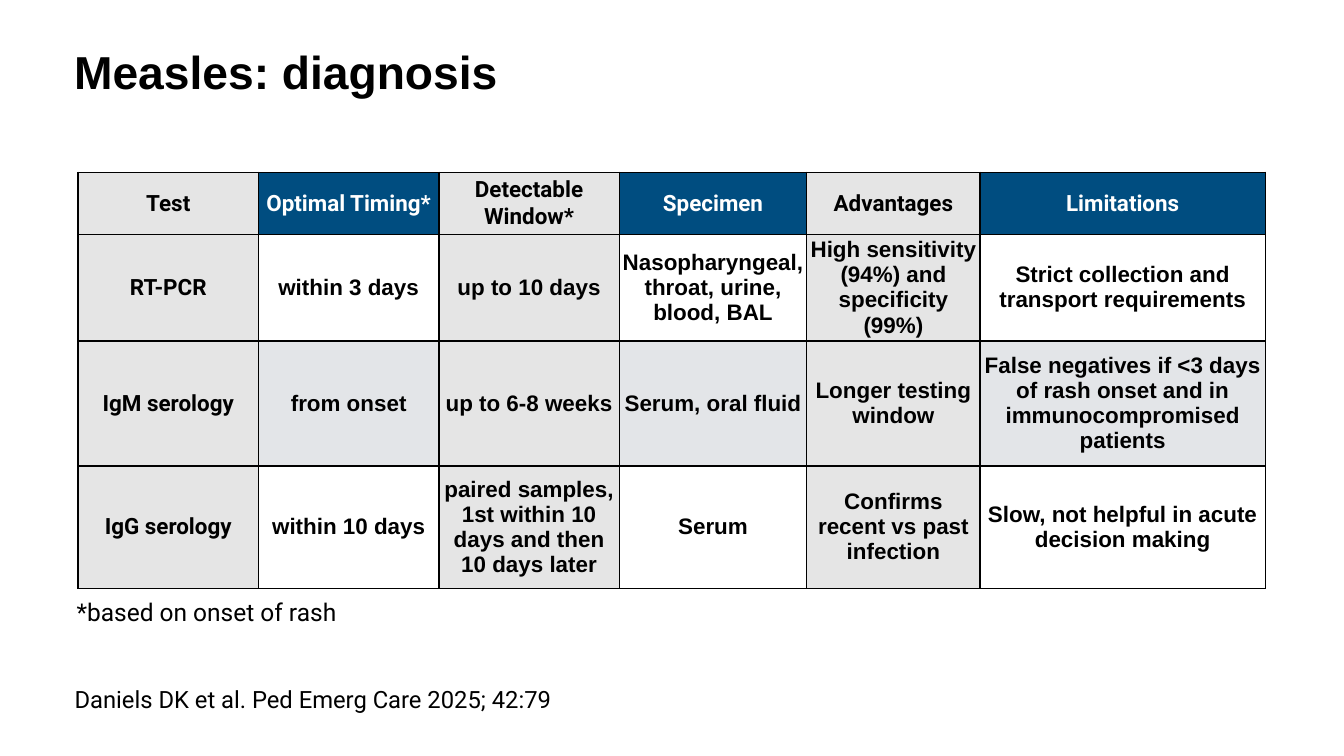
"""Build the measles diagnosis slide with its test comparison table."""
import dataclasses

import pptx
import pptx.dml.color
import pptx.enum.text
import pptx.oxml
import pptx.oxml.ns
import pptx.util

PX = 9144
ANCHOR = pptx.enum.text.MSO_ANCHOR
ALIGN = pptx.enum.text.PP_ALIGN
AUTO = pptx.enum.text.MSO_AUTO_SIZE


@dataclasses.dataclass(frozen=True)
class Theme:
    """Colours, fonts and type sizes of the slide."""
    ink: str = "000000"
    paper: str = "FFFFFF"
    accent: str = "004D80"
    band: str = "E3E5E8"
    shade_percent: int = 10
    heading: str = "Arial"
    label: str = "Roboto"
    title_size: int = 66
    cell_size: int = 32
    source_size: int = 34
    note_size: int = 35
    border_width: float = 2.25
    pad: int = 6
    title_pad: int = 10


def px(n):
    """Turn px into EMU."""
    return pptx.util.Emu(n * PX)


class Deck:
    """Holds the theme and the current slide, and draws each kind of element."""

    def __init__(self, prs, theme):
        """Add a title-only slide to the presentation."""
        self.theme = theme
        self.slide = prs.slides.add_slide(prs.slide_layouts[5])

    def run(self, p, text, size, font, color, bold=False):
        """Add one formatted run to a paragraph."""
        r = p.add_run()
        r.text = text
        r.font.size = pptx.util.Pt(size)
        r.font.name = font
        r.font.bold = bold
        r.font.color.rgb = pptx.dml.color.RGBColor.from_string(color)

    def inset(self, frame, pad):
        """Give a text frame or cell equal margins on all sides."""
        frame.margin_left = frame.margin_right = px(pad)
        frame.margin_top = frame.margin_bottom = px(pad)

    def title(self, text, x, y, w, h):
        """Place and fill the title placeholder."""
        t = self.theme
        sp = self.slide.shapes.title
        sp.left, sp.top, sp.width, sp.height = map(px, (x, y, w, h))
        tf = sp.text_frame
        tf.auto_size = AUTO.NONE
        tf.vertical_anchor = ANCHOR.MIDDLE
        self.inset(tf, t.title_pad)
        p = tf.paragraphs[0]
        p.alignment = ALIGN.LEFT
        p.line_spacing = 0.9
        self.run(p, text, t.title_size, t.heading, t.ink, True)

    def text(self, text, x, y, w, h, size):
        """Add a plain text box."""
        t = self.theme
        tf = self.slide.shapes.add_textbox(*map(px, (x, y, w, h))).text_frame
        tf.word_wrap = True
        tf.auto_size = AUTO.SHAPE_TO_FIT_TEXT
        tf.vertical_anchor = ANCHOR.MIDDLE
        self.inset(tf, t.pad)
        self.run(tf.paragraphs[0], text, size, t.label, t.ink)

    def border(self, cell):
        """Draw a solid line on the four sides of a cell."""
        t = self.theme
        width = pptx.util.Pt(t.border_width)
        ns = pptx.oxml.ns.nsdecls("a")
        tc_pr = cell._tc.get_or_add_tcPr()
        for i, side in enumerate("LRTB"):
            tc_pr.insert(i, pptx.oxml.parse_xml(
                f'<a:ln{side} {ns} w="{width}"><a:solidFill>'
                f'<a:srgbClr val="{t.ink}"/></a:solidFill></a:ln{side}>'))

    def cell(self, cell, text, row, col):
        """Fill one cell, styled by its row and column."""
        t = self.theme
        shaded = col % 2 == 0
        header = row == 0
        plain = t.band if row == 2 else t.paper
        fill = t.ink if shaded else t.accent if header else plain
        cell.fill.solid()
        cell.fill.fore_color.rgb = pptx.dml.color.RGBColor.from_string(fill)
        if shaded:
            clr = cell._tc.tcPr.find(".//" + pptx.oxml.ns.qn("a:srgbClr"))
            clr.append(pptx.oxml.parse_xml(
                f'<a:alpha {pptx.oxml.ns.nsdecls("a")} '
                f'val="{t.shade_percent * 1000}"/>'))
        self.border(cell)
        self.inset(cell, t.pad)
        cell.vertical_anchor = ANCHOR.MIDDLE
        p = cell.text_frame.paragraphs[0]
        p.alignment = ALIGN.CENTER
        font = t.label if header or col == 0 else t.heading
        color = t.paper if header and not shaded else t.ink
        self.run(p, text, t.cell_size, font, color, True)

    def table(self, rows, x, y, widths, heights):
        """Add a table with the given column widths and row heights."""
        sp = self.slide.shapes.add_table(
            len(rows), len(widths), px(x), px(y),
            px(sum(widths)), px(sum(heights)))
        tbl = sp.table
        tbl.first_row = tbl.horz_banding = False
        for column, w in zip(tbl.columns, widths):
            column.width = px(w)
        for row, h in zip(tbl.rows, heights):
            row.height = px(h)
        for i, texts in enumerate(rows):
            for j, text in enumerate(texts):
                self.cell(tbl.cell(i, j), text, i, j)


TESTS = [
    ["Test", "Optimal Timing*", "Detectable Window*", "Specimen",
     "Advantages", "Limitations"],
    ["RT-PCR", "within 3 days", "up to 10 days",
     "Nasopharyngeal, throat, urine, blood, BAL",
     "High sensitivity (94%) and specificity (99%)",
     "Strict collection and transport requirements"],
    ["IgM serology", "from onset", "up to 6-8 weeks", "Serum, oral fluid",
     "Longer testing window",
     "False negatives if <3 days of rash onset and in immunocompromised "
     "patients"],
    ["IgG serology", "within 10 days",
     "paired samples, 1st within 10 days and then 10 days later", "Serum",
     "Confirms recent vs past infection",
     "Slow, not helpful in acute decision making"],
]


def main():
    """Build and save the slide."""
    prs = pptx.Presentation()
    prs.slide_width, prs.slide_height = px(2667), px(1500)
    theme = Theme()
    deck = Deck(prs, theme)
    deck.title("Measles: diagnosis", 137, 61, 2300, 175)
    deck.table(TESTS, 155, 342, [358, 358, 358, 372, 344, 566],
               [123, 202, 248, 243])
    deck.text("Daniels DK et al. Ped Emerg Care 2025; 42:79",
              142, 1353, 1052, 68, theme.source_size)
    deck.text("*based on onset of rash", 146, 1181, 535, 67, theme.note_size)
    prs.save("out.pptx")


if __name__ == "__main__":
    main()
